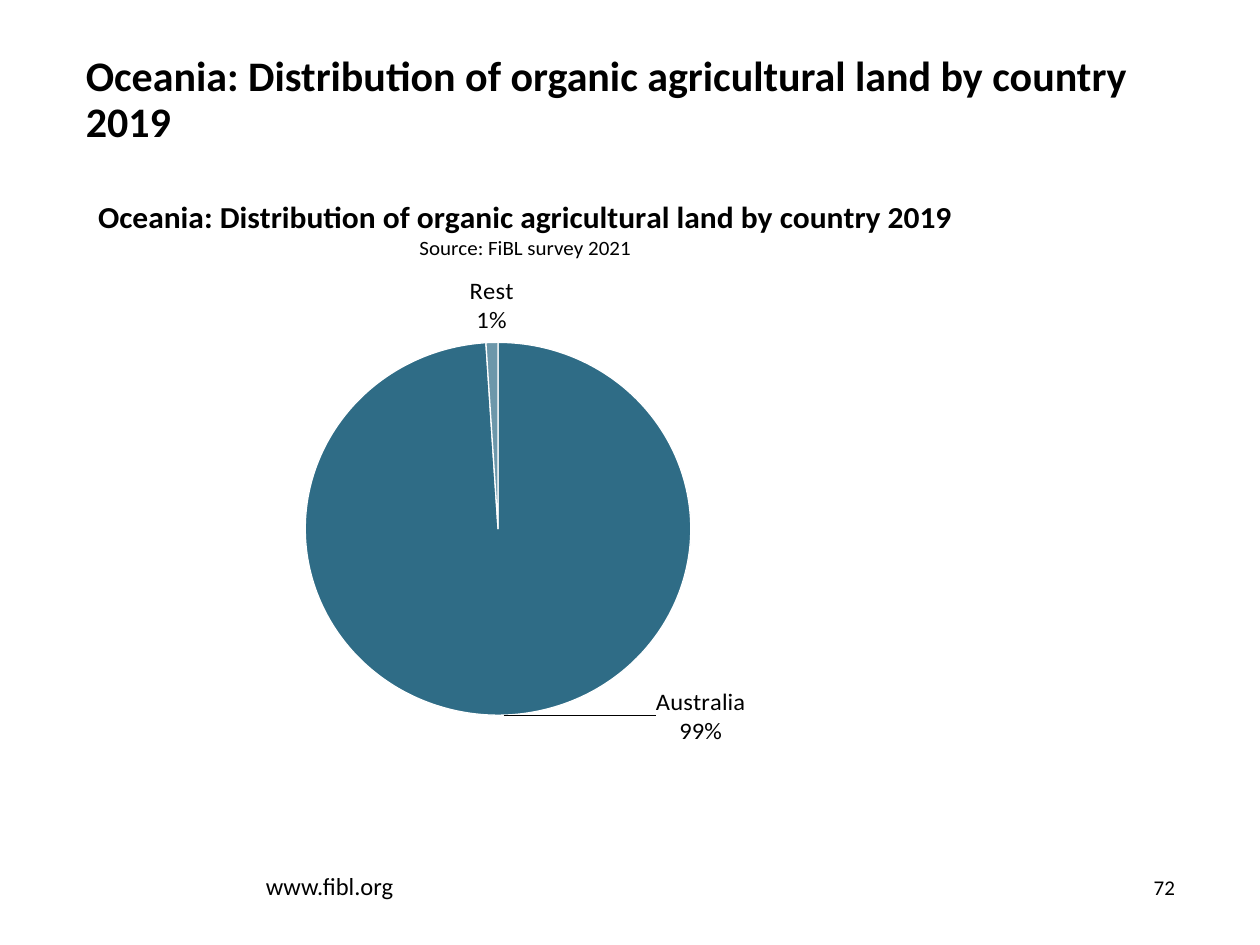
from lxml import etree
from pptx import Presentation
from pptx.chart.data import CategoryChartData
from pptx.dml.color import RGBColor
from pptx.enum.chart import XL_CHART_TYPE as ChartType, XL_LABEL_POSITION as LabelPos
from pptx.enum.text import MSO_ANCHOR as Anchor, PP_ALIGN as Align
from pptx.oxml import parse_xml
from pptx.oxml.ns import nsdecls, qn
from pptx.util import Cm, Pt

COLORS = {"text": "000000", "pie": "2F6C86", "edge": "FFFFFF"}
FONT = "Calibri"
HEADING = "Oceania: Distribution of organic agricultural land by country 2019"
SOURCE = "Source: FiBL survey 2021"
SHARES = {"Australia": 99, "Rest": 1}


def rgb(name):
    return RGBColor.from_string(COLORS[name])


def style_font(font, size, bold=False):
    font.name = FONT
    font.size = Pt(size)
    font.bold = bold
    font.color.rgb = rgb("text")


def add_text(slide, text, box, size, bold=False, align=Align.LEFT,
             anchor=Anchor.BOTTOM, inset=0.13, spacing=1.0):
    tf = slide.shapes.add_textbox(*map(Cm, box)).text_frame
    tf.word_wrap = True
    tf.vertical_anchor = anchor
    tf.margin_left = tf.margin_right = 0
    tf.margin_top = tf.margin_bottom = Cm(inset)
    p = tf.paragraphs[0]
    p.text = text
    p.alignment = align
    p.line_spacing = spacing
    style_font(p.font, size, bold)
    return p


def manual_layout(x, y, w=None, h=None, edge=True):
    layout = etree.Element(qn("c:layout"))
    manual = etree.SubElement(layout, qn("c:manualLayout"))
    values = {"x": x, "y": y}
    if w:
        etree.SubElement(manual, qn("c:layoutTarget"), val="inner")
        values.update(w=w, h=h)
    if edge:
        for mode in ("xMode", "yMode"):
            etree.SubElement(manual, qn(f"c:{mode}"), val="edge")
    for key, value in values.items():
        etree.SubElement(manual, qn(f"c:{key}"), val=str(value))
    return layout


def style_title(chart):
    tf = chart.chart_title.text_frame
    tf.text = HEADING
    style_font(tf.paragraphs[0].font, 18, True)
    p = tf.add_paragraph()
    p.text = SOURCE
    style_font(p.font, 12)
    title = chart._chartSpace.chart.find(qn("c:title"))
    for tag in ("c:layout", "c:overlay"):
        for old in title.findall(qn(tag)):
            title.remove(old)
    layout = manual_layout(0.01, 0.01)
    title.find(qn("c:tx")).addnext(layout)
    layout.addnext(etree.Element(qn("c:overlay"), val="1"))


def style_slices(series):
    for i in range(len(SHARES)):
        fmt = series.points[i].format
        fmt.fill.solid()
        fmt.fill.fore_color.rgb = rgb("pie")
        fmt.line.color.rgb = rgb("edge")
        fmt.line.width = Pt(0.75)
    rest = series._element.findall(qn("c:dPt"))[1]
    color = rest.find(f"{qn('c:spPr')}/{qn('a:solidFill')}/{qn('a:srgbClr')}")
    etree.SubElement(color, qn("a:alpha"), val="70000")


def style_labels(series):
    labels = series.data_labels
    labels.show_value = False
    labels.show_category_name = True
    labels.show_percentage = True
    labels.number_format = "0%"
    labels.number_format_is_linked = False
    labels.position = LabelPos.OUTSIDE_END
    style_font(labels.font, 14)
    d_lbls = labels._element
    separator = etree.Element(qn("c:separator"))
    separator.text = "\n"
    d_lbls.find(qn("c:showBubbleSize")).addnext(separator)
    australia = parse_xml(
        f'<c:dLbl {nsdecls("c")}><c:idx val="0"/><c:dLblPos val="outEnd"/>'
        '<c:showLegendKey val="0"/><c:showVal val="0"/><c:showCatName val="1"/>'
        '<c:showSerName val="0"/><c:showPercent val="1"/>'
        '<c:showBubbleSize val="0"/><c:separator>\n</c:separator></c:dLbl>')
    australia.find(qn("c:idx")).addnext(manual_layout(0.18, -0.06, edge=False))
    d_lbls.insert(0, australia)


def add_pie(slide, box):
    data = CategoryChartData(number_format="#,##0")
    data.categories = list(SHARES)
    data.add_series("Series 1", list(SHARES.values()))
    chart = slide.shapes.add_chart(ChartType.PIE, *map(Cm, box), data).chart
    chart.has_legend = False
    style_font(chart.font, 18)
    style_title(chart)
    plot = chart.plots[0]
    plot.vary_by_categories = False
    style_slices(plot.series[0])
    style_labels(plot.series[0])
    area = chart._chartSpace.chart.plotArea
    for old in area.findall(qn("c:layout")):
        area.remove(old)
    area.insert(0, manual_layout(0.17, 0.27, 0.42, 0.65))


def main():
    prs = Presentation()
    prs.slide_width, prs.slide_height = Cm(25.4), Cm(19.05)
    slide = prs.slides.add_slide(prs.slide_layouts[6])
    add_text(slide, "www.fibl.org", (5.36, 17.42, 7.6, 0.86), 14)
    add_text(slide, HEADING, (1.73, 1.12, 21.97, 1.75), 24, True,
             anchor=Anchor.TOP, inset=0, spacing=0.9)
    add_pie(slide, (1.68, 3.78, 22, 11.96))
    number = add_text(slide, "72", (21.51, 17.27, 2.18, 0.99), 12, align=Align.RIGHT)
    number.runs[0].font._element.set("spc", "20")
    prs.save("out.pptx")


if __name__ == "__main__":
    main()
